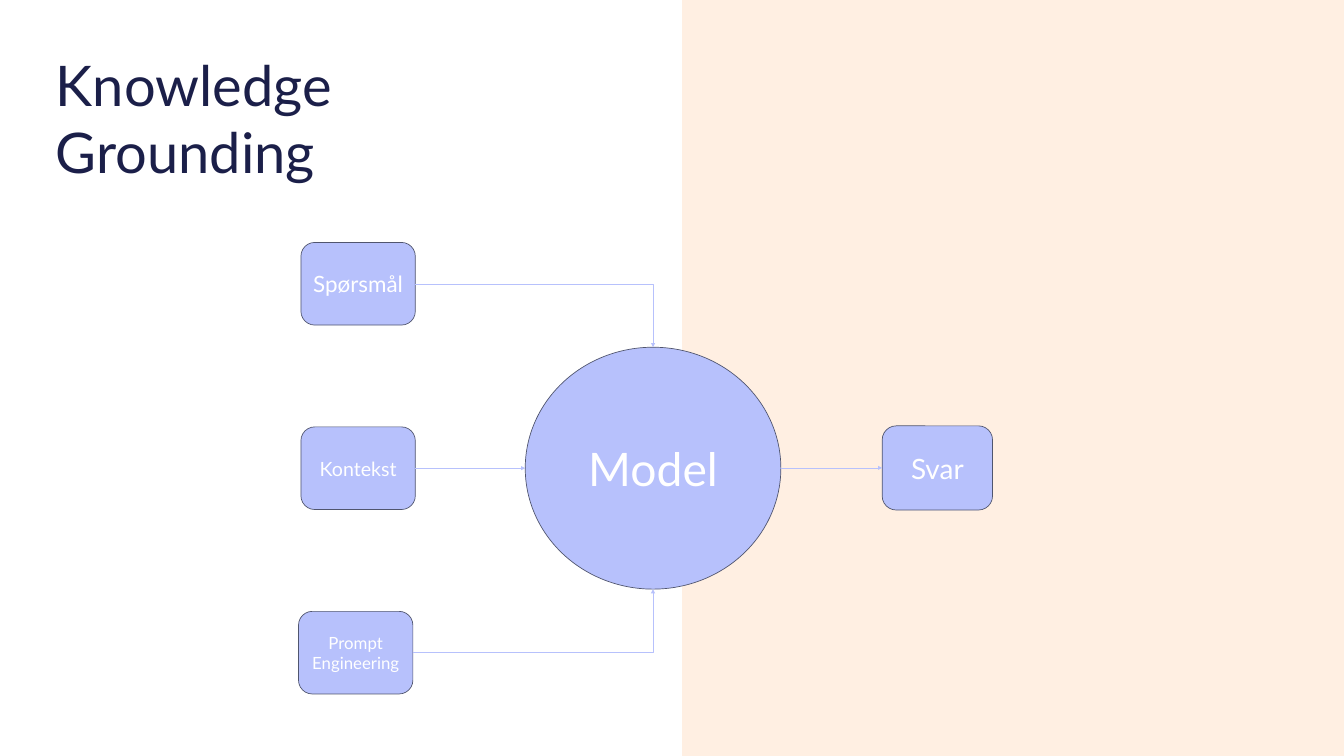
"""Build the Knowledge Grounding slide: three inputs feed a model that gives an answer."""
from lxml import etree
from pptx import Presentation
from pptx import util as u
from pptx.dml.color import RGBColor
from pptx.enum import shapes, text
from pptx.oxml import ns

NAVY = RGBColor(0x1B, 0x1F, 0x49)
SLATE = RGBColor(0x50, 0x55, 0x6E)
LILAC = RGBColor(0xB7, 0xC1, 0xFC)
PEACH = RGBColor(0xFF, 0xEF, 0xE2)
WHITE = RGBColor(0xFF, 0xFF, 0xFF)
TOP, LEFT, BOTTOM, RIGHT = range(4)

deck = Presentation()
deck.slide_width, deck.slide_height = u.Inches(26.66), u.Inches(15)
slide = deck.slides.add_slide(deck.slide_layouts[6])


def share(x, y, w, h):
    """Turn percentages of the slide into lengths."""
    sides = (deck.slide_width, deck.slide_height) * 2
    return [u.Emu(round(side * part / 100)) for side, part in zip(sides, (x, y, w, h))]


def add_node(kind, area, label, size):
    """Add a lilac node with a centred label."""
    node = slide.shapes.add_shape(kind, *share(*area))
    node.shadow.inherit = False
    node.fill.solid()
    node.fill.fore_color.rgb = LILAC
    node.line.color.rgb = SLATE
    node.line.width = u.Pt(1)
    node.text_frame.word_wrap = True
    node.text_frame.vertical_anchor = text.MSO_ANCHOR.MIDDLE
    paragraph = node.text_frame.paragraphs[0]
    paragraph.alignment = text.PP_ALIGN.CENTER
    run = paragraph.add_run()
    run.text = label
    run.font.name, run.font.size = "Lato", u.Pt(size)
    run.font.color.rgb = WHITE
    return node


panel = slide.shapes.add_shape(shapes.MSO_SHAPE.RECTANGLE, *share(50.75, 0, 49.25, 100))
panel.shadow.inherit = False
panel.fill.solid()
panel.fill.fore_color.rgb = PEACH
panel.line.fill.background()

title = slide.shapes.add_textbox(*share(4.16, 15.4, 39.87, 9)).text_frame
title.word_wrap = True
title.vertical_anchor = text.MSO_ANCHOR.BOTTOM
title.margin_left = title.margin_top = title.margin_right = title.margin_bottom = 0
heading = title.paragraphs[0].add_run()
heading.text = "Knowledge Grounding"
heading.font.name, heading.font.size = "Lato", u.Pt(80)
heading.font.color.rgb = NAVY

model = add_node(shapes.MSO_SHAPE.OVAL, (39.08, 45.93, 19.02, 32), "Model", 66)
rounded = shapes.MSO_SHAPE.ROUNDED_RECTANGLE
inputs = [("Spørsmål", 32, 22.39), ("Kontekst", 28, 22.39), ("Prompt Engineering", 24, 22.21)]
question, context, prompt = [
    add_node(rounded, (x, 32.07 + 24.4 * row, 8.51, 10.93), label, size)
    for row, (label, size, x) in enumerate(inputs)
]
answer = add_node(rounded, (65.64, 56.33, 8.21, 11.13), "Svar", 40)

flows = [
    (question, RIGHT, model, TOP, "bentConnector2"),
    (context, RIGHT, model, LEFT, "bentConnector3"),
    (prompt, RIGHT, model, BOTTOM, "bentConnector2"),
    (model, RIGHT, answer, LEFT, "bentConnector3"),
]
for source, source_side, target, target_side, bend in flows:
    flow = slide.shapes.add_connector(shapes.MSO_CONNECTOR.ELBOW, 0, 0, 0, 0)
    flow.begin_connect(source, source_side)
    flow.end_connect(target, target_side)
    flow.line.color.rgb = LILAC
    flow.line.width = u.Pt(0.5)
    properties = flow._element.spPr
    properties.find(ns.qn("a:prstGeom")).set("prst", bend)
    etree.SubElement(flow.line._get_or_add_ln(), ns.qn("a:tailEnd"), type="triangle")
    etree.SubElement(properties, ns.qn("a:effectLst"))
    for joint in flow._element.iter(ns.qn("a:stCxn"), ns.qn("a:endCxn")):
        if joint.get("id") == str(model.shape_id):
            joint.set("idx", str(2 * int(joint.get("idx"))))

deck.save("out.pptx")
